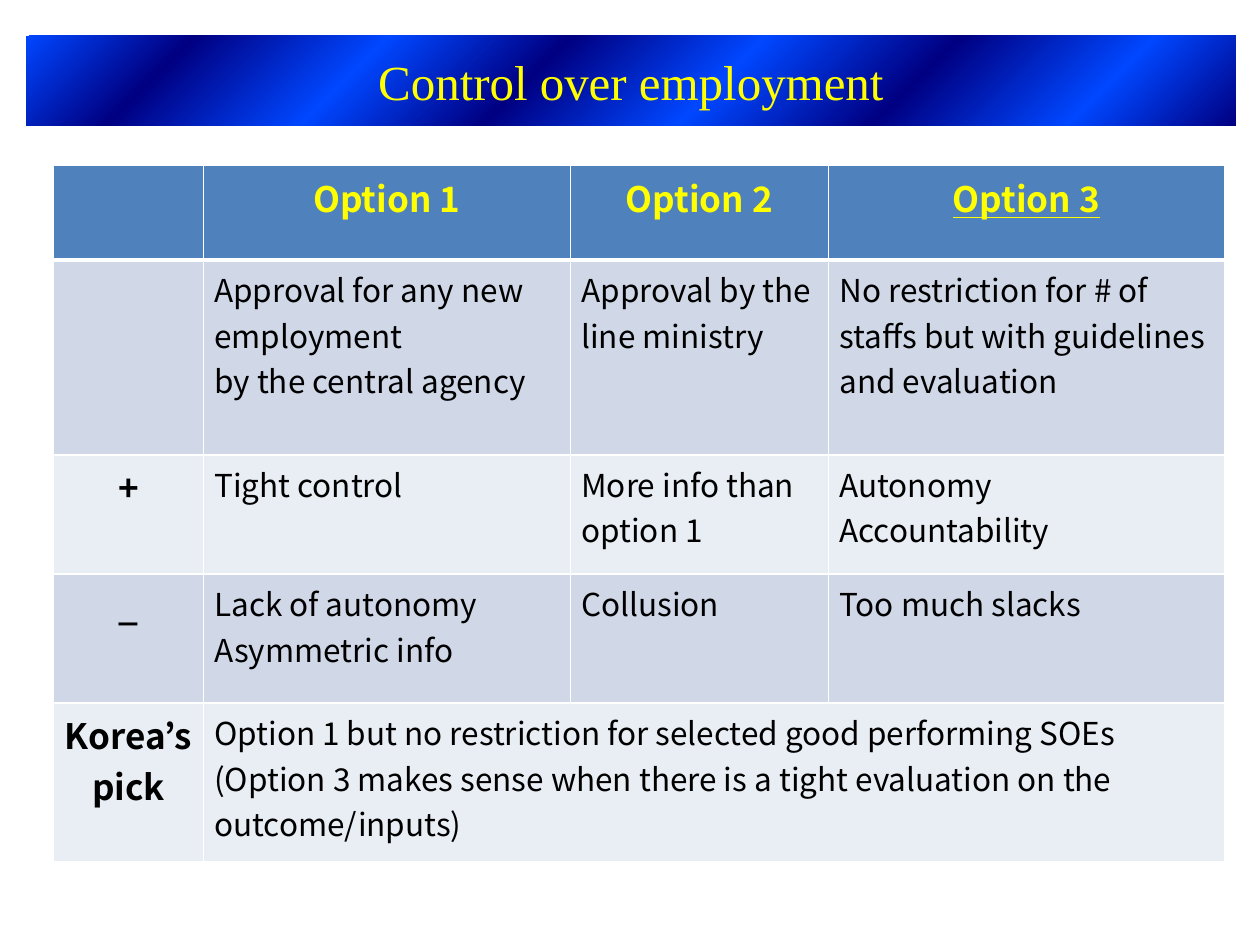
from lxml import etree
from pptx import Presentation
from pptx.dml.color import RGBColor
from pptx.enum import shapes, text
from pptx.oxml import ns, parse_xml
from pptx.util import Cm, Pt

SANS = "Noto Sans CJK KR"
SERIF = "Times New Roman"
YELLOW, BLACK, WHITE = "FFFF00", "000000", "FFFFFF"
HEADER, BANDS = "4F81BD", ("E9EDF4", "D0D8E8")
STRIPES = ("000082", "0047FF")
STOPS = (0, 13, 28, 43, 58, 72, 87, 100)
COLS = (3.02, 7.4, 5.2, 7.98)
ROWS = (1.9, 3.93, 2.4, 2.6, 3.2)
CELLS = (
    ("", "Option 1", "Option 2", "Option 3"),
    ("", "Approval for any new employment\nby the central agency",
     "Approval by the line ministry",
     "No restriction for # of staffs but with guidelines and evaluation"),
    ("+", "Tight control", "More info than option 1", "Autonomy\nAccountability"),
    ("_", "Lack of autonomy\nAsymmetric info", "Collusion", "Too much slacks"),
    ("Korea’s pick",
     "Option 1 but no restriction for selected good performing SOEs\n"
     "(Option 3 makes sense when there is a tight evaluation on the outcome/inputs)"),
)


def rgb(value):
    return RGBColor.from_string(value)


def format_text(tf, font, size, color, bold=False, centered=False):
    for p in tf.paragraphs:
        p.alignment = text.PP_ALIGN.CENTER if centered else text.PP_ALIGN.LEFT
        for r in p.runs:
            r.font.name = font
            r.font.size = Pt(size)
            r.font.bold = bold
            r.font.color.rgb = rgb(color)
            ea = etree.SubElement(r._r.get_or_add_rPr(), ns.qn("a:ea"))
            ea.set("typeface", font)


def fill_stripes(sp):
    stops = "".join(
        f'<a:gs pos="{pos * 1000}"><a:srgbClr val="{STRIPES[i % 2]}"/></a:gs>'
        for i, pos in enumerate(STOPS))
    grad = parse_xml(
        f'<a:gradFill {ns.nsdecls("a")} rotWithShape="1"><a:gsLst>{stops}</a:gsLst>'
        '<a:path path="circle"><a:fillToRect l="100000" t="100000"/></a:path>'
        '</a:gradFill>')
    sp._element.spPr.find(ns.qn("a:prstGeom")).addnext(grad)


def add_title(slide, left, top, width, height):
    sp = slide.shapes.add_shape(
        shapes.MSO_SHAPE.RECTANGLE, Cm(left), Cm(top), Cm(width), Cm(height))
    sp.shadow.inherit = False
    sp.line.fill.background()
    fill_stripes(sp)
    tf = sp.text_frame
    tf.word_wrap = True
    tf.vertical_anchor = text.MSO_ANCHOR.MIDDLE
    tf.text = "Control over employment"
    format_text(tf, SERIF, 28, YELLOW, centered=True)


def set_borders(cell, bottom):
    tcPr = cell._tc.get_or_add_tcPr()
    widths = {"lnL": 1, "lnR": 1, "lnT": 1, "lnB": bottom}
    for i, (side, width) in enumerate(widths.items()):
        tcPr.insert(i, parse_xml(
            f'<a:{side} {ns.nsdecls("a")} w="{Pt(width)}"><a:solidFill>'
            f'<a:srgbClr val="{WHITE}"/></a:solidFill></a:{side}>'))


def add_options(slide, left, top):
    table = slide.shapes.add_table(
        len(ROWS), len(COLS), Cm(left), Cm(top), Cm(sum(COLS)), Cm(sum(ROWS))).table
    table.first_row = table.horz_banding = False
    for col, width in zip(table.columns, COLS):
        col.width = Cm(width)
    for i, (row, height) in enumerate(zip(table.rows, ROWS)):
        row.height = Cm(height)
        for j, cell in enumerate(row.cells):
            cell.margin_left = cell.margin_right = Cm(0.22)
            cell.margin_top = cell.margin_bottom = Cm(0.12)
            cell.fill.solid()
            cell.fill.fore_color.rgb = rgb(BANDS[i % 2] if i else HEADER)
            set_borders(cell, 1 if i else 3)
            if j < len(CELLS[i]) and CELLS[i][j]:
                heading = i == 0 or j == 0
                cell.text_frame.text = CELLS[i][j]
                format_text(cell.text_frame, SANS, 20 if heading else 18,
                            BLACK if i else YELLOW, heading, heading)
    table.cell(4, 1).merge(table.cell(4, 3))
    table.cell(0, 3).text_frame.paragraphs[0].runs[0].font.underline = True


def main():
    prs = Presentation()
    prs.slide_width, prs.slide_height = Cm(25.4), Cm(19.05)
    slide = prs.slides.add_slide(prs.slide_layouts[6])
    add_title(slide, 0.53, 0.72, 24.38, 1.81)
    add_options(slide, 1.08, 3.34)
    prs.save("out.pptx")


if __name__ == "__main__":
    main()
